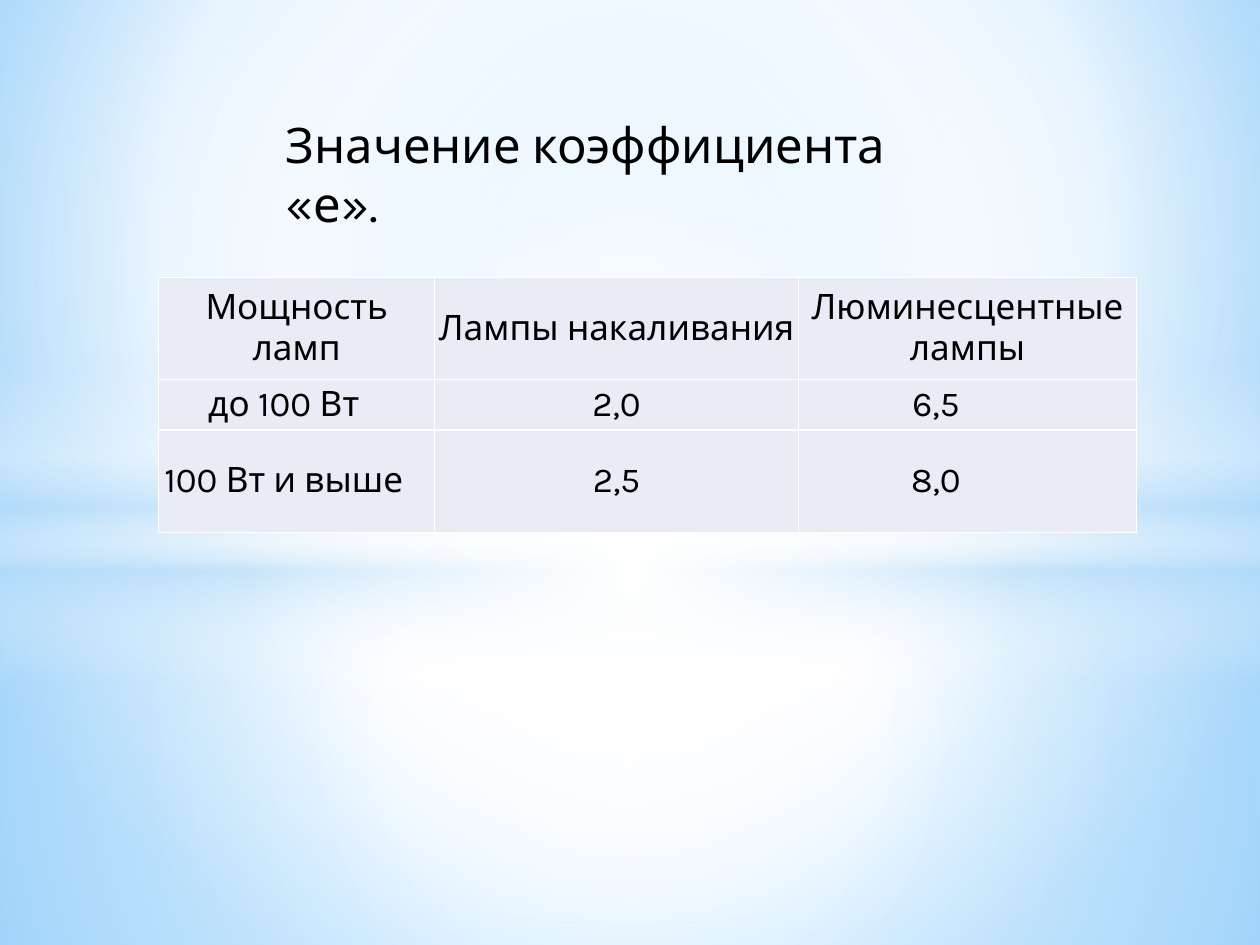
from dataclasses import dataclass

from lxml import etree
from pptx import Presentation
from pptx.dml.color import RGBColor
from pptx.enum.shapes import MSO_SHAPE
from pptx.enum.text import MSO_ANCHOR, PP_ALIGN
from pptx.oxml.ns import qn
from pptx.util import Cm, Pt

RECTANGLE, OVAL = MSO_SHAPE.RECTANGLE, MSO_SHAPE.OVAL
LEFT, CENTER = PP_ALIGN.LEFT, PP_ALIGN.CENTER
MIDDLE = MSO_ANCHOR.MIDDLE


@dataclass(frozen=True)
class Theme:
    font: str = "Karla"
    title_size: int = 28
    table_size: int = 20
    text: str = "000000"
    cell: str = "E9EBF5"
    white: str = "FFFFFF"
    pale_blue: str = "B4DCFA"
    sky: str = "9ED5FF"
    deep_sky: str = "5BB9FF"


THEME = Theme()
WHITE, PALE = THEME.white, THEME.pale_blue
MIDPOINT = (50, 50, 50, 50)

# Gradient stops are (position %, colour, opacity %).
BACKGROUND = [(0, THEME.sky, 100), (60, WHITE, 100), (100, THEME.deep_sky, 100)]
GLOWS = [
    (RECTANGLE, 10.75, 8.3, [(0, WHITE, 91), (37, WHITE, 76), (100, PALE, 79)], MIDPOINT),
    (RECTANGLE, 0, 10.75, [(0, WHITE, 89), (48, WHITE, 62), (100, PALE, 79)], MIDPOINT),
    (RECTANGLE, 7.37, 6.35,
     [(0, WHITE, 0), (29, WHITE, 30), (45, PALE, 40),
      (55, WHITE, 26), (65, PALE, 60), (100, WHITE, 0)], None),
    (OVAL, 4.45, 14.17, [(0, WHITE, 100), (54, WHITE, 0)], MIDPOINT),
]

ROWS = [
    ["Мощность ламп", "Лампы накаливания", "Люминесцентные\nлампы"],
    ["до 100 Вт", "2,0", "6,5"],
    ["100 Вт и выше", "2,5", "8,0"],
]
COLUMN_WIDTHS = [5.56, 7.34, 6.81]
ROW_HEIGHTS = [2.06, 1.02, 2.06]
CELL_MARGIN = 0.08
BODY_RIGHT_MARGINS = [0.6, CELL_MARGIN, 1.35]


def add_child(parent, tag, **attributes):
    values = {name: str(value) for name, value in attributes.items()}
    return etree.SubElement(parent, qn(tag), values)


def apply_gradient(owner, fill, stops, focus):
    """Fill owner with a circular gradient around focus, or a vertical one if focus is None."""
    fill.solid()
    solid = owner.find(".//" + qn("a:solidFill"))
    gradient = etree.Element(qn("a:gradFill"), rotWithShape="1")
    stop_list = add_child(gradient, "a:gsLst")
    for position, color, opacity in stops:
        stop = add_child(stop_list, "a:gs", pos=position * 1000)
        stop_color = add_child(stop, "a:srgbClr", val=color)
        if opacity < 100:
            add_child(stop_color, "a:alpha", val=opacity * 1000)
    if focus is None:
        add_child(gradient, "a:lin", ang=5400000, scaled=0)
    else:
        circle = add_child(gradient, "a:path", path="circle")
        sides = {side: value * 1000 for side, value in zip("ltrb", focus)}
        add_child(circle, "a:fillToRect", **sides)
    solid.getparent().replace(solid, gradient)


def write_text(text_frame, text, *, size, align=LEFT):
    for index, line in enumerate(text.split("\n")):
        paragraph = text_frame.add_paragraph() if index else text_frame.paragraphs[0]
        paragraph.alignment = align
        run = paragraph.add_run()
        run.text = line
        run.font.name = THEME.font
        run.font.size = Pt(size)
        run.font.color.rgb = RGBColor.from_string(THEME.text)


def add_glow(slide, kind, top, height, stops, focus):
    shape = slide.shapes.add_shape(kind, 0, Cm(top), Cm(25.4), Cm(height))
    shape.shadow.inherit = False
    shape.line.fill.background()
    apply_gradient(shape.element.spPr, shape.fill, stops, focus)


def add_title(slide, text):
    box = slide.shapes.add_textbox(Cm(5.51), Cm(2.18), Cm(14.27), Cm(1.45))
    box.text_frame.word_wrap = True
    write_text(box.text_frame, text, size=THEME.title_size)


def add_borders(cell):
    properties = cell._tc.get_or_add_tcPr()
    for index, side in enumerate(("a:lnL", "a:lnR", "a:lnT", "a:lnB")):
        line = etree.Element(qn(side), w=str(Pt(1)))
        add_child(add_child(line, "a:solidFill"), "a:srgbClr", val=WHITE)
        properties.insert(index, line)


def format_cell(cell, text, right_margin):
    cell.vertical_anchor = MIDDLE
    cell.margin_left, cell.margin_right = Cm(CELL_MARGIN), Cm(right_margin)
    cell.margin_top = cell.margin_bottom = 0
    cell.fill.solid()
    cell.fill.fore_color.rgb = RGBColor.from_string(THEME.cell)
    add_borders(cell)
    write_text(cell.text_frame, text, size=THEME.table_size, align=CENTER)


def add_lamp_table(slide):
    frame = slide.shapes.add_table(
        len(ROWS), len(COLUMN_WIDTHS), Cm(3.2), Cm(5.59),
        Cm(sum(COLUMN_WIDTHS)), Cm(sum(ROW_HEIGHTS)))
    table = frame.table
    table.first_row = table.horz_banding = False
    for column, width in zip(table.columns, COLUMN_WIDTHS):
        column.width = Cm(width)
    for row_index, (row, height) in enumerate(zip(table.rows, ROW_HEIGHTS)):
        row.height = Cm(height)
        for cell, text, body_margin in zip(row.cells, ROWS[row_index], BODY_RIGHT_MARGINS):
            format_cell(cell, text, body_margin if row_index else CELL_MARGIN)


def main():
    presentation = Presentation()
    presentation.slide_width, presentation.slide_height = Cm(25.4), Cm(19.05)
    slide = presentation.slides.add_slide(presentation.slide_layouts[6])
    apply_gradient(slide.element, slide.background.fill, BACKGROUND, (20, 10, 20, 60))
    for glow in GLOWS:
        add_glow(slide, *glow)
    add_title(slide, "Значение коэффициента «е».")
    add_lamp_table(slide)
    presentation.save("out.pptx")


if __name__ == "__main__":
    main()
